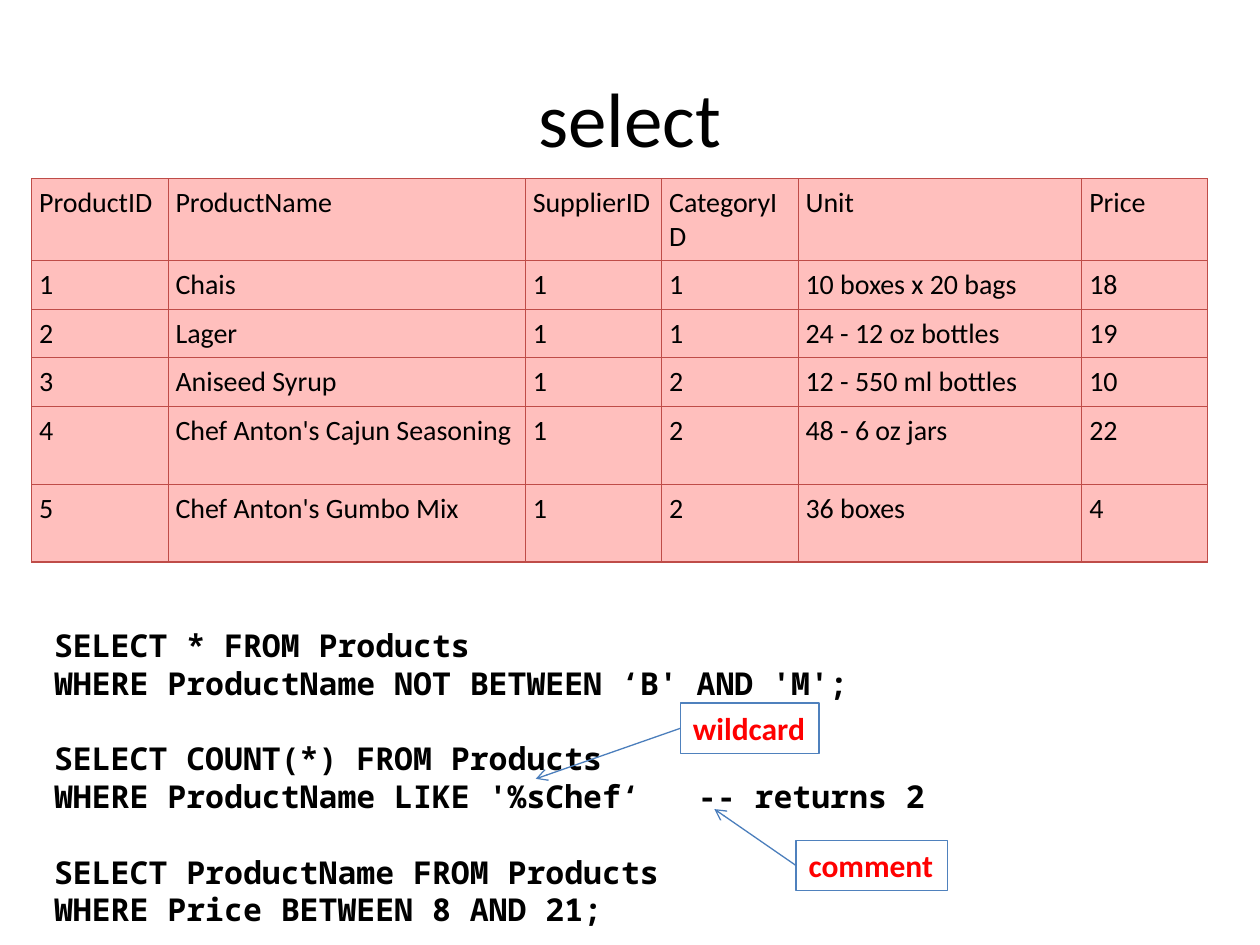
from lxml.etree import SubElement
from pptx import Presentation
from pptx.dml.color import RGBColor
from pptx.enum.shapes import MSO_CONNECTOR, MSO_SHAPE
from pptx.enum.text import MSO_ANCHOR, MSO_AUTO_SIZE, PP_ALIGN
from pptx.oxml import parse_xml
from pptx.oxml.ns import nsdecls, qn
from pptx.util import Cm, Pt

COLORS = {"text": "000000", "note": "FF0000", "note_line": "4F81BD",
          "arrow": "4B7EBC", "cell": "FFBFBD", "border": "BF4C48"}
SANS, MONO = "Calibri", "Noto Sans Mono"

TITLE = "select"
PRODUCTS = [
    ("ProductID", "ProductName", "SupplierID", "CategoryID", "Unit", "Price"),
    ("1", "Chais", "1", "1", "10 boxes x 20 bags", "18"),
    ("2", "Lager", "1", "1", "24 - 12 oz bottles", "19"),
    ("3", "Aniseed Syrup", "1", "2", "12 - 550 ml bottles", "10"),
    ("4", "Chef Anton's Cajun Seasoning", "1", "2", "48 - 6 oz jars", "22"),
    ("5", "Chef Anton's Gumbo Mix", "1", "2", "36 boxes", "4"),
]
COL_WIDTHS = [2.75, 7.2, 2.75, 2.75, 5.72, 2.54]
ROW_HEIGHTS = [0.86] * 4 + [1.57] * 2
QUERIES = [
    ("SELECT * FROM Products",
     "WHERE ProductName NOT BETWEEN ‘B' AND 'M';"),
    ("SELECT COUNT(*) FROM Products",
     "WHERE ProductName LIKE '%sChef‘\t-- returns 2"),
    ("SELECT ProductName FROM Products",
     "WHERE Price BETWEEN 8 AND 21;"),
]
COMMENT_TAB = 12.98
# label, box (left, top, width, height), arrow tip
NOTES = [
    ("wildcard", (13.72, 14.17, 2.79, 1.02), (10.8, 15.7)),
    ("comment", (16.05, 16.94, 3.05, 1.02), (14.4, 16.31)),
]


def rgb(name):
    return RGBColor.from_string(COLORS[name])


def cms(values):
    return [Cm(v) for v in values]


def add_run(p, text, size, font=SANS, color="text", bold=False):
    r = p.add_run()
    r.text = text
    r.font.size, r.font.name, r.font.bold = Pt(size), font, bold
    r.font.color.rgb = rgb(color)


def add_title(s):
    tf = s.shapes.add_textbox(*cms((1.27, 0.76, 22.86, 3.18))).text_frame
    tf.word_wrap = True
    tf.vertical_anchor = MSO_ANCHOR.MIDDLE
    p = tf.paragraphs[0]
    p.alignment = PP_ALIGN.CENTER
    add_run(p, TITLE, 44)


def set_borders(cell):
    tc_pr = cell._tc.get_or_add_tcPr()
    for i, side in enumerate(("lnL", "lnR", "lnT", "lnB")):
        tc_pr.insert(i, parse_xml(
            f'<a:{side} {nsdecls("a")} w="{Pt(0.75)}"><a:solidFill>'
            f'<a:srgbClr val="{COLORS["border"]}"/></a:solidFill></a:{side}>'))


def add_products(s):
    size = (sum(COL_WIDTHS), sum(ROW_HEIGHTS))
    table = s.shapes.add_table(len(PRODUCTS), len(COL_WIDTHS),
                               *cms((0.64, 3.6, *size))).table
    for col, width in zip(table.columns, COL_WIDTHS):
        col.width = Cm(width)
    for row, height, values in zip(table.rows, ROW_HEIGHTS, PRODUCTS):
        row.height = Cm(height)
        for cell, value in zip(row.cells, values):
            cell.margin_left = cell.margin_right = Cm(0.15)
            cell.margin_top = cell.margin_bottom = Cm(0.15)
            cell.fill.solid()
            cell.fill.fore_color.rgb = rgb("cell")
            set_borders(cell)
            add_run(cell.text_frame.paragraphs[0], value, 16)


def add_queries(s):
    tf = s.shapes.add_textbox(*cms((0.84, 12.5, 22.43, 6.4))).text_frame
    tf.word_wrap = True
    for i, lines in enumerate(QUERIES):
        p = tf.add_paragraph() if i else tf.paragraphs[0]
        p.space_before = Pt(21.5 if i else 0)
        tabs = SubElement(p._p.get_or_add_pPr(), qn("a:tabLst"))
        SubElement(tabs, qn("a:tab"), pos=str(Cm(COMMENT_TAB)), algn="l")
        for j, line in enumerate(lines):
            if j:
                p.add_line_break()
            add_run(p, line, 18, MONO, bold=True)


def add_note(s, label, box, tip):
    sp = s.shapes.add_shape(MSO_SHAPE.RECTANGLE, *cms(box))
    sp.shadow.inherit = False
    sp.fill.background()
    sp.line.color.rgb = rgb("note_line")
    sp.line.width = Pt(0.75)
    tf = sp.text_frame
    tf.word_wrap = False
    tf.auto_size = MSO_AUTO_SIZE.SHAPE_TO_FIT_TEXT
    tf.vertical_anchor = MSO_ANCHOR.TOP
    p = tf.paragraphs[0]
    p.alignment = PP_ALIGN.LEFT
    add_run(p, label, 18, color="note", bold=True)

    arrow = s.shapes.add_connector(MSO_CONNECTOR.STRAIGHT, 0, 0, *cms(tip))
    arrow.begin_connect(sp, 1)
    arrow.line.color.rgb = rgb("arrow")
    arrow.line.width = Pt(0.75)
    SubElement(arrow.line._get_or_add_ln(), qn("a:tailEnd"), type="arrow")
    SubElement(arrow._element.spPr, qn("a:effectLst"))


def main():
    prs = Presentation()
    prs.slide_width, prs.slide_height = cms((25.4, 19.05))
    s = prs.slides.add_slide(prs.slide_layouts[6])
    add_title(s)
    add_products(s)
    add_queries(s)
    for note in NOTES:
        add_note(s, *note)
    prs.save("out.pptx")


if __name__ == "__main__":
    main()
